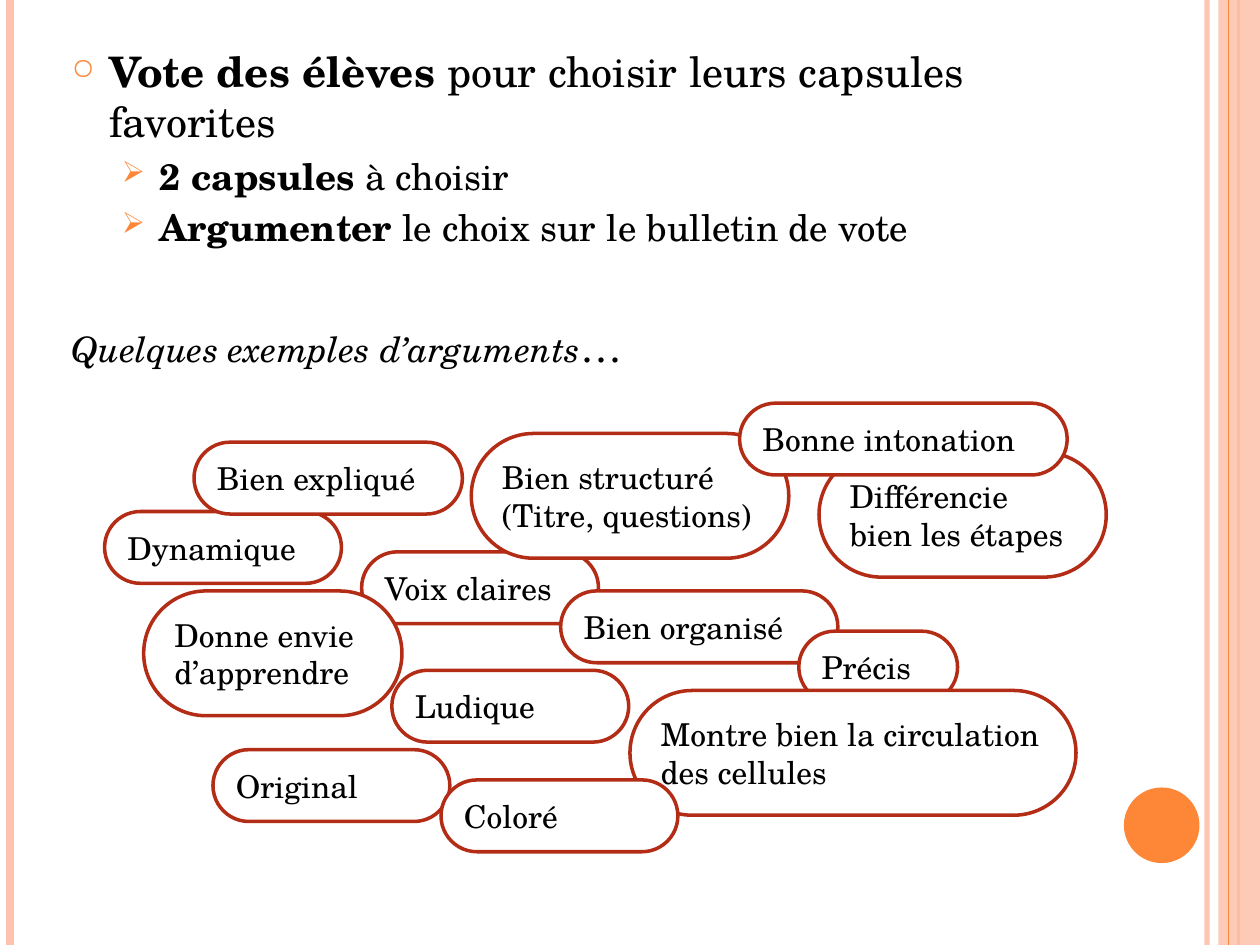
import pptx
import pptx.util
import pptx.dml.color
import pptx.enum.shapes
import pptx.enum.text
import pptx.oxml.ns
import lxml.etree

Inches = pptx.util.Inches
Pt = pptx.util.Pt
RGBColor = pptx.dml.color.RGBColor
SHAPE = pptx.enum.shapes.MSO_SHAPE
qn = pptx.oxml.ns.qn

ORANGE = RGBColor(0xFE, 0x86, 0x37)
PEACH = RGBColor(0xFE, 0xC3, 0xAE)
RED = RGBColor(0xB3, 0x2C, 0x16)
WHITE = RGBColor(0xFF, 0xFF, 0xFF)
BLACK = RGBColor(0, 0, 0)
FONT = "TeX Gyre Schola"
LOW, HIGH = 0.57, 0.99

PILLS = [
    ("Dynamique", 0.83, 4.06, 1.88, LOW),
    ("Voix claires", 2.87, 4.38, 1.88, LOW),
    ("Bien expliqué", 1.54, 3.51, 2.13, LOW),
    ("Donne envie d’apprendre", 1.14, 4.69, 2.05, HIGH),
    ("Différencie bien les étapes", 6.5, 3.59, 2.28, HIGH),
    ("Bien organisé", 4.45, 4.69, 2.2, LOW),
    ("Original", 1.69, 5.95, 1.88, LOW),
    ("Ludique", 3.11, 5.32, 1.88, LOW),
    ("Bien structuré (Titre, questions)", 3.74, 3.44, 2.52, HIGH),
    ("Bonne intonation", 5.87, 3.2, 2.6, LOW),
    ("Précis", 6.34, 5.01, 1.26, LOW),
    ("Montre bien la circulation des cellules", 5, 5.48, 3.54, HIGH),
    ("Coloré", 3.5, 6.19, 1.88, LOW),
]


def add_text(para, text, size=18, bold=False, italic=False):
    """Append a formatted run to a paragraph."""
    run = para.add_run()
    run.text = text
    font = run.font
    font.name, font.size = FONT, Pt(size)
    font.bold, font.italic = bold, italic
    font.color.rgb = BLACK


def set_alpha(part, share):
    """Set the opacity, in percent, of a solid colour inside an element."""
    color = next(part.iter(qn("a:srgbClr")))
    lxml.etree.SubElement(color, qn("a:alpha"), val=str(share * 1000))


def add_rule(slide, x, color, width, alpha=100):
    """Draw a vertical rule down the whole slide."""
    rule = slide.shapes.add_connector(
        pptx.enum.shapes.MSO_CONNECTOR.STRAIGHT,
        Inches(x), Inches(0), Inches(x), Inches(7.5))
    rule.line.color.rgb = color
    rule.line.width = Pt(width)
    if alpha < 100:
        set_alpha(rule.line._ln, alpha)
    lxml.etree.SubElement(rule._element.spPr, qn("a:effectLst"))


def add_form(slide, kind, x, y, wide, high, fill):
    """Add a flat filled shape without an outline."""
    form = slide.shapes.add_shape(
        kind, Inches(x), Inches(y), Inches(wide), Inches(high))
    form.shadow.inherit = False
    form.fill.solid()
    form.fill.fore_color.rgb = fill
    form.line.fill.background()
    return form


def add_pill(slide, text, x, y, wide, high):
    """Add a rounded label holding one argument."""
    pill = add_form(slide, SHAPE.ROUNDED_RECTANGLE, x, y, wide, high, WHITE)
    pill.adjustments[0] = 0.5
    pill.line.color.rgb = RED
    pill.line.width = Pt(2)
    frame = pill.text_frame
    frame.word_wrap = True
    frame.auto_size = pptx.enum.text.MSO_AUTO_SIZE.SHAPE_TO_FIT_TEXT
    para = frame.paragraphs[0]
    para.alignment = pptx.enum.text.PP_ALIGN.LEFT
    add_text(para, text)


def set_list(para, left, before, mark=None, scale=100):
    """Give a paragraph its hanging indent, spacing and bullet."""
    para.space_before = Pt(before)
    props = para._p.get_or_add_pPr()
    props.set("marL", str(Inches(left)))
    props.set("indent", str(Inches(-0.3)))
    if mark:
        color = lxml.etree.SubElement(props, qn("a:buClr"))
        lxml.etree.SubElement(color, qn("a:srgbClr"), val=str(ORANGE))
        lxml.etree.SubElement(props, qn("a:buSzPct"), val=str(scale * 1000))
        lxml.etree.SubElement(props, qn("a:buChar"), char=mark)


def add_body(slide):
    """Add the bulleted text and the lead-in to the examples."""
    box = slide.shapes.add_textbox(
        Inches(0.47), Inches(0.31), Inches(8.17), Inches(5.33))
    frame = box.text_frame
    frame.word_wrap = True
    para = frame.paragraphs[0]
    set_list(para, 0.3, 6, "○", 70)
    add_text(para, "Vote des élèves ", size=24, bold=True)
    add_text(para, "pour choisir leurs capsules favorites", size=24)
    for head, tail in [("2 capsules ", "à choisir"),
                       ("Argumenter", " le choix sur le bulletin de vote")]:
        para = frame.add_paragraph()
        para.level = 1
        set_list(para, 0.7, 4.2, "➢", 80)
        add_text(para, head, size=21, bold=True)
        add_text(para, tail, size=21)
    para = frame.add_paragraph()
    set_list(para, 0.3, 41)
    add_text(para, "Quelques exemples d’arguments", size=20, italic=True)
    add_text(para, "…", size=24)


def add_frame(slide):
    """Draw the side bands and the round accent."""
    add_rule(slide, 9.58, PEACH, 3, alpha=93)
    add_rule(slide, 0.08, PEACH, 4.5)
    add_rule(slide, 9.83, ORANGE, 1.5)
    band = add_form(slide, SHAPE.RECTANGLE, 9.67, 0, 0.33, 7.5, PEACH)
    set_alpha(band._element.spPr, 87)
    add_rule(slide, 9.75, ORANGE, 0.75)
    add_form(slide, SHAPE.OVAL, 8.92, 6.25, 0.6, 0.6, ORANGE)


def main():
    """Build and save the slide."""
    deck = pptx.Presentation()
    deck.slide_width, deck.slide_height = Inches(10), Inches(7.5)
    slide = deck.slides.add_slide(deck.slide_layouts[6])
    add_frame(slide)
    add_body(slide)
    for pill in PILLS:
        add_pill(slide, *pill)
    deck.save("out.pptx")


if __name__ == "__main__":
    main()
